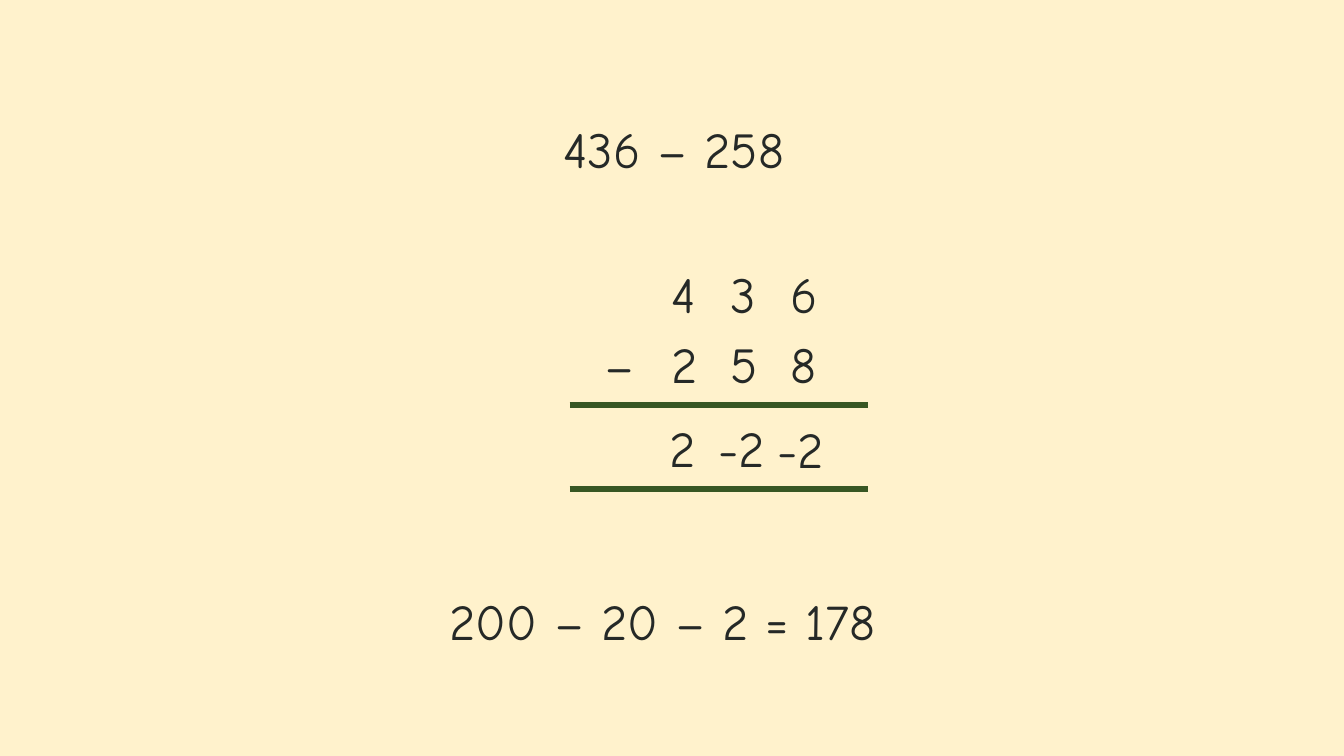
from dataclasses import dataclass

import lxml.etree
import pptx
import pptx.dml.color
import pptx.enum.shapes
import pptx.enum.text
import pptx.oxml.ns
import pptx.shapes.shapetree
import pptx.slide
import pptx.util
from pptx.util import Inches


@dataclass(frozen=True)
class Theme:
    background: str = "FFF2CC"
    ink: str = "252927"
    rule: str = "385723"
    font: str = "Comic Neue"
    text_size: float = 36
    rule_width: float = 4


@dataclass(frozen=True)
class Label:
    text: str
    left: float
    top: float
    width: float
    tabs: tuple[float, ...] = ()


THEME = Theme()
TEXT_HEIGHT = 0.71
RULE_LEFT, RULE_RIGHT = 5.65, 8.61
RULE_TOPS = (4.02, 4.85)
DIGIT_TABS = (0.59, 1.18)

LABELS = (
    Label("436 – 258", 5.49, 1.12, 2.58),
    Label("4\t3\t6", 6.56, 2.56, 1.73, DIGIT_TABS),
    Label("2\t5\t8", 6.56, 3.26, 1.73, DIGIT_TABS),
    Label("–", 5.9, 3.26, 0.42),
    Label("-2", 7.61, 4.1, 0.72),
    Label("-2", 7.03, 4.09, 0.72),
    Label("2", 6.54, 4.09, 0.51),
    Label("200 – 20 – 2 = 178", 4.36, 5.81, 4.51),
)


def color(value: str) -> pptx.dml.color.RGBColor:
    return pptx.dml.color.RGBColor.from_string(value)


def add_text(page: pptx.slide.Slide, text: str, *, left: float, top: float,
             width: float, tabs: tuple[float, ...] = ()) -> None:
    """Add one line of text; tabs are distances from the text's left edge."""
    box = page.shapes.add_textbox(
        Inches(left), Inches(top), Inches(width), Inches(TEXT_HEIGHT))
    frame = box.text_frame
    frame.word_wrap = bool(tabs)
    frame.auto_size = pptx.enum.text.MSO_AUTO_SIZE.SHAPE_TO_FIT_TEXT
    para = frame.paragraphs[0]
    span = para.add_run()
    span.text = text
    span.font.name = THEME.font
    span.font.size = pptx.util.Pt(THEME.text_size)
    span.font.color.rgb = color(THEME.ink)
    if tabs:
        qn = pptx.oxml.ns.qn
        tab_list = lxml.etree.SubElement(para._p.get_or_add_pPr(), qn("a:tabLst"))
        for position in tabs:
            lxml.etree.SubElement(
                tab_list, qn("a:tab"), pos=str(Inches(position)), algn="l")


def add_rule(shapes: pptx.shapes.shapetree.GroupShapes, top: float) -> None:
    rule = shapes.add_connector(
        pptx.enum.shapes.MSO_CONNECTOR.STRAIGHT,
        Inches(RULE_LEFT), Inches(top), Inches(RULE_RIGHT), Inches(top))
    rule.line.color.rgb = color(THEME.rule)
    rule.line.width = pptx.util.Pt(THEME.rule_width)
    lxml.etree.SubElement(
        rule._element.spPr, pptx.oxml.ns.qn("a:effectLst"))


def main() -> None:
    deck = pptx.Presentation()
    deck.slide_width, deck.slide_height = Inches(13.33), Inches(7.5)
    page = deck.slides.add_slide(deck.slide_layouts[6])
    page.background.fill.solid()
    page.background.fill.fore_color.rgb = color(THEME.background)

    rules = page.shapes.add_group_shape()
    for top in RULE_TOPS:
        add_rule(rules.shapes, top)
    for label in LABELS:
        add_text(page, label.text, left=label.left, top=label.top,
                 width=label.width, tabs=label.tabs)
    deck.save("out.pptx")


if __name__ == "__main__":
    main()
